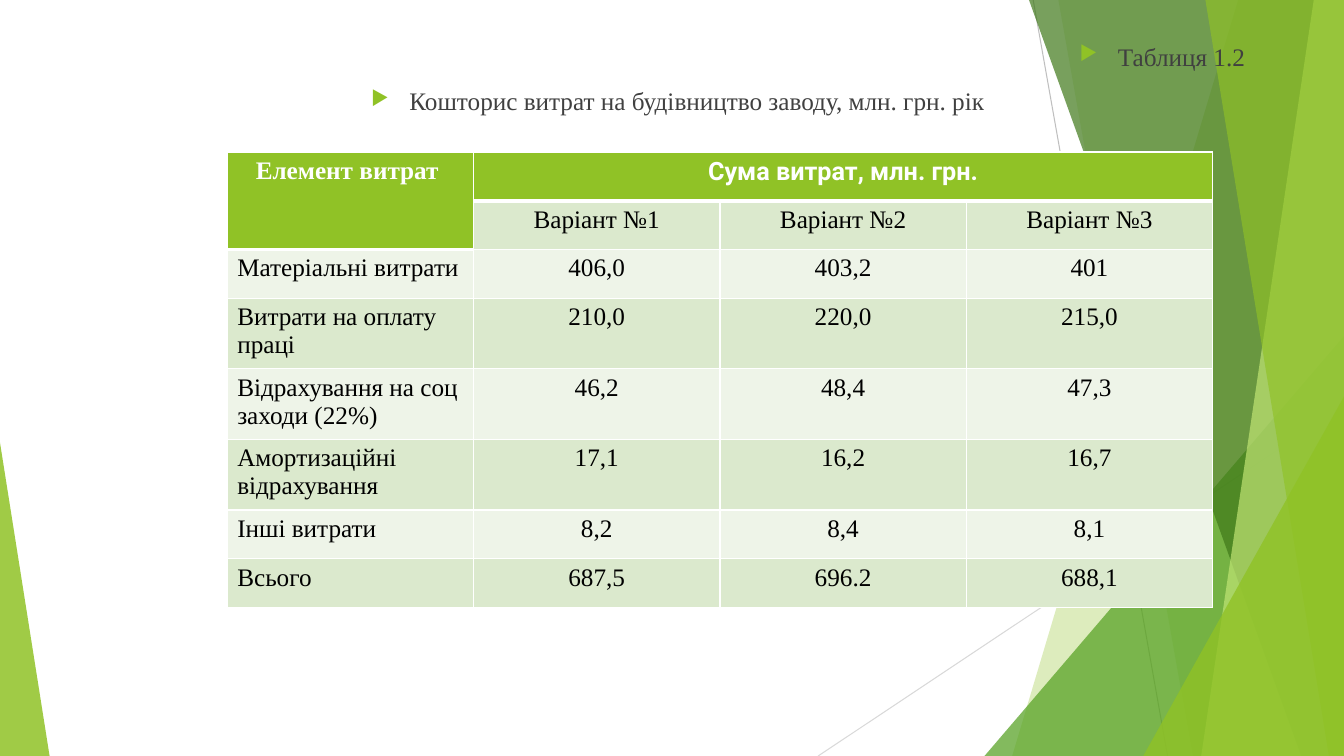
import dataclasses

import lxml.etree
import pptx
import pptx.dml.color
import pptx.enum.shapes
import pptx.enum.text
import pptx.oxml.ns
import pptx.util

COLS, ROWS = 160, 90
ALIGN = pptx.enum.text.PP_ALIGN
qn = pptx.oxml.ns.qn


@dataclasses.dataclass(frozen=True)
class Theme:
    accent: str = "90C226"
    leaf: str = "54A021"
    forest: str = "3F7819"
    lime: str = "C0E474"
    rule_dark: str = "BFBFBF"
    rule_light: str = "D9D9D9"
    white: str = "FFFFFF"
    body: str = "404040"
    cell: str = "000000"
    bands: tuple = ("EEF4E8", "DBE9CD")
    serif: str = "Times New Roman"
    sans: str = "Roboto"
    size: int = 18
    hairline: float = 0.75
    border: int = 1
    header_border: int = 3


def rgb(color):
    return pptx.dml.color.RGBColor.from_string(color)


def add_xml(parent, tag, **attrs):
    el = lxml.etree.SubElement(parent, qn(tag))
    for name, value in attrs.items():
        el.set(name, str(value))
    return el


class SlideBuilder:
    """Places elements on a grid of COLS by ROWS over the slide."""

    def __init__(self, prs, theme):
        self.theme = theme
        self.unit_x = prs.slide_width / COLS
        self.unit_y = prs.slide_height / ROWS
        self.slide = prs.slides.add_slide(prs.slide_layouts[6])
        self.shapes = self.slide.shapes

    def x(self, cols):
        return pptx.util.Emu(round(cols * self.unit_x))

    def y(self, rows):
        return pptx.util.Emu(round(rows * self.unit_y))

    def box(self, left, top, width, height):
        return self.x(left), self.y(top), self.x(width), self.y(height)

    def line(self, start, end, color):
        cn = self.shapes.add_connector(
            pptx.enum.shapes.MSO_CONNECTOR.STRAIGHT,
            self.x(start[0]), self.y(start[1]), self.x(end[0]), self.y(end[1]))
        cn.line.color.rgb = rgb(color)
        cn.line.width = pptx.util.Pt(self.theme.hairline)
        add_xml(cn.element.spPr, "a:effectLst")

    def paint(self, sp, color, opacity):
        """Fill without outline or shadow; opacity is in percent."""
        sp.shadow.inherit = False
        sp.line.fill.background()
        sp.fill.solid()
        sp.fill.fore_color.rgb = rgb(color)
        clr = sp.element.spPr.find(qn("a:solidFill")).find(qn("a:srgbClr"))
        add_xml(clr, "a:alpha", val=opacity * 1000)

    def band(self, top_x, bottom_x, color, opacity):
        """Full-height band from a slanted left edge to the slide's right edge."""
        fb = self.shapes.build_freeform(self.x(top_x), 0, scale=1.0)
        fb.add_line_segments([(self.x(COLS), 0), (self.x(COLS), self.y(ROWS)),
                              (self.x(bottom_x), self.y(ROWS))], close=True)
        self.paint(fb.convert_to_shape(), color, opacity)

    def triangle(self, left, right, top, apex, color, opacity):
        """Triangle standing on the slide's bottom; apex 0 is left, 1 is right."""
        sp = self.shapes.add_shape(
            pptx.enum.shapes.MSO_SHAPE.ISOSCELES_TRIANGLE,
            *self.box(left, top, right - left, ROWS - top))
        sp.adjustments[0] = apex
        self.paint(sp, color, opacity)

    def run(self, p, text, color, font, bold=False):
        r = p.add_run()
        r.text = text
        r.font.name = font
        r.font.size = pptx.util.Pt(self.theme.size)
        r.font.bold = bold
        r.font.color.rgb = rgb(color)

    def bullets(self, left, top, width, height, items):
        tf = self.shapes.add_textbox(*self.box(left, top, width, height)).text_frame
        tf.word_wrap = True
        for i, (text, align) in enumerate(items):
            p = tf.add_paragraph() if i else tf.paragraphs[0]
            p.alignment = align
            p.space_before = pptx.util.Pt(10)
            self.run(p, text, self.theme.body, self.theme.serif)
            ppr = p._p.get_or_add_pPr()
            indent = pptx.util.Inches(0.38)
            ppr.set("marL", str(indent))
            ppr.set("indent", str(-indent))
            add_xml(add_xml(ppr, "a:buClr"), "a:srgbClr", val=self.theme.accent)
            add_xml(ppr, "a:buSzPct", val=80000)
            add_xml(ppr, "a:buChar", char="▶")

    def borders(self, cell, top, bottom):
        tcpr = cell._tc.get_or_add_tcPr()
        thin = self.theme.border
        for side, width in zip("LRTB", (thin, thin, top, bottom)):
            ln = add_xml(tcpr, "a:ln" + side, w=pptx.util.Pt(width))
            add_xml(add_xml(ln, "a:solidFill"), "a:srgbClr", val=self.theme.white)

    def cost_table(self, left, top, col_width, row_height, rows):
        th = self.theme
        n_rows, n_cols = len(rows), len(rows[0])
        table = self.shapes.add_table(
            n_rows, n_cols,
            *self.box(left, top, n_cols * col_width, n_rows * row_height)).table
        table.first_row = table.horz_banding = False
        table.cell(0, 0).merge(table.cell(1, 0))
        table.cell(0, 1).merge(table.cell(0, n_cols - 1))
        for i, row in enumerate(rows):
            for j, text in enumerate(row):
                cell = table.cell(i, j)
                header_end = 1 if j == 0 else 0
                header = i <= header_end
                self.borders(
                    cell,
                    th.header_border if i == header_end + 1 else th.border,
                    th.header_border if header else th.border)
                cell.fill.solid()
                cell.fill.fore_color.rgb = rgb(th.accent if header else th.bands[i % 2])
                if text:
                    p = cell.text_frame.paragraphs[0]
                    p.alignment = ALIGN.CENTER if header or j else ALIGN.LEFT
                    self.run(p, text, th.white if header else th.cell,
                             th.sans if header and j else th.serif, header)


COSTS = [
    ("Елемент витрат ", "Сума витрат, млн. грн.", "", ""),
    ("", "Варіант №1", "Варіант №2", "Варіант №3"),
    ("Матеріальні витрати", "406,0", "403,2", "401"),
    ("Витрати на оплату праці", "210,0", "220,0", "215,0"),
    ("Відрахування на соц заходи (22%)", "46,2", "48,4", "47,3"),
    ("Амортизаційні відрахування", "17,1", "16,2", "16,7"),
    ("Інші витрати", "8,2", "8,4", "8,1"),
    ("Всього", "687,5", "696.2", "688,1"),
]


def main():
    prs = pptx.Presentation()
    prs.slide_width = pptx.util.Inches(13.33)
    prs.slide_height = pptx.util.Inches(7.5)
    th = Theme()
    s = SlideBuilder(prs, th)

    s.line((123, 0), (139, ROWS), th.rule_dark)
    s.line((COLS, 48.3), (97.4, ROWS), th.rule_light)
    s.band(147.4, 120.5, th.accent, 30)
    s.band(126, 142, th.accent, 20)
    s.triangle(117.2, COLS, 40, 1, th.leaf, 72)
    s.band(122.5, 154.9, th.forest, 70)
    s.band(156.4, 143, th.lime, 70)
    s.band(143.5, 158.2, th.accent, 65)
    s.triangle(136.1, COLS, 47.2, 1, th.accent, 80)
    s.triangle(0, 5.9, 52.7, 0, th.accent, 85)

    s.bullets(12, 4.3, 137.4, 66.5, [
        ("Таблиця 1.2", ALIGN.RIGHT),
        ("Кошторис витрат на будівництво заводу, млн. грн. рік", ALIGN.CENTER),
    ])
    s.cost_table(27.05, 18.1, 29.33, 5.8, COSTS)
    prs.save("out.pptx")


if __name__ == "__main__":
    main()
